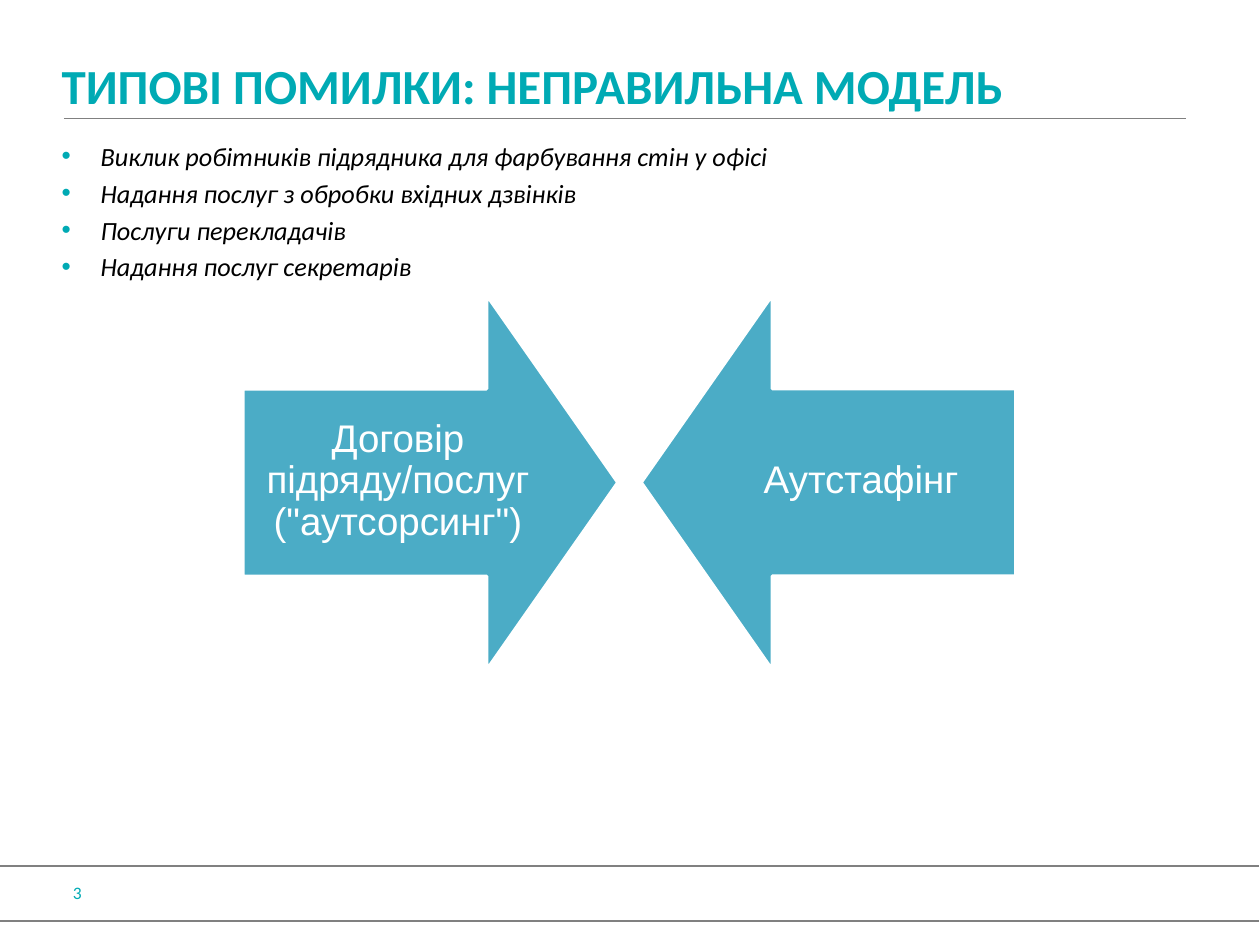
import pptx
import pptx.dml.color
import pptx.enum.shapes
import pptx.enum.text
import pptx.oxml
import pptx.oxml.ns
import pptx.util
from lxml import etree

EMU_PER_PX = 914400 // 126
TEAL = pptx.dml.color.RGBColor(0x00, 0xAA, 0xB4)
BLUE = pptx.dml.color.RGBColor(0x4B, 0xAC, 0xC6)
GREY = pptx.dml.color.RGBColor(0x80, 0x80, 0x80)
BLACK = pptx.dml.color.RGBColor(0, 0, 0)
WHITE = pptx.dml.color.RGBColor(255, 255, 255)
ALIGN = pptx.enum.text.PP_ALIGN
MIDDLE = pptx.enum.text.MSO_ANCHOR.MIDDLE
TOP = pptx.enum.text.MSO_ANCHOR.TOP

TITLE_FORMAT = {"name": "Calibri", "size": pptx.util.Pt(28), "bold": True, "color": TEAL}
LIST_FORMAT = {"name": "Calibri", "size": pptx.util.Pt(15), "italic": True, "color": BLACK}
NUMBER_FORMAT = {"name": "Calibri", "size": pptx.util.Pt(10), "color": TEAL}
ARROW_FORMAT = {"name": "Arial", "size": pptx.util.Pt(22), "color": WHITE}


def px(value):
    return pptx.util.Emu(value * EMU_PER_PX)


class SlideBuilder:
    def __init__(self, slide):
        self.slide = slide

    def place(self, shape, box):
        for name, value in zip(("left", "top", "width", "height"), box):
            setattr(shape, name, px(value))

    def style(self, paragraph, text_format, align):
        paragraph.alignment = align
        for name, value in text_format.items():
            if name == "color":
                paragraph.font.color.rgb = value
            else:
                setattr(paragraph.font, name, value)

    def prepare_frame(self, shape, anchor):
        frame = shape.text_frame
        frame.word_wrap = True
        frame.auto_size = pptx.enum.text.MSO_AUTO_SIZE.NONE
        frame.vertical_anchor = anchor
        return frame

    def title(self, text, box):
        shape = self.slide.shapes.title
        self.place(shape, box)
        frame = self.prepare_frame(shape, MIDDLE)
        frame.text = text
        self.style(frame.paragraphs[0], TITLE_FORMAT, ALIGN.LEFT)

    def bullets(self, items, box):
        shape = self.slide.placeholders[1]
        self.place(shape, box)
        frame = self.prepare_frame(shape, TOP)
        frame.text = "\n".join(items)
        for index, paragraph in enumerate(frame.paragraphs):
            properties = paragraph._p.get_or_add_pPr()
            properties.set("marL", str(px(39)))
            properties.set("indent", str(-px(39)))
            color = etree.SubElement(properties, pptx.oxml.ns.qn("a:buClr"))
            etree.SubElement(color, pptx.oxml.ns.qn("a:srgbClr"), val=str(TEAL))
            etree.SubElement(properties, pptx.oxml.ns.qn("a:buFont"), typeface="Arial")
            etree.SubElement(properties, pptx.oxml.ns.qn("a:buChar"), char="•")
            paragraph.space_before = pptx.util.Pt(3 if index else 0)
            self.style(paragraph, LIST_FORMAT, ALIGN.LEFT)

    def text(self, text, box, text_format, align, margin=None, line_spacing=None):
        shape = self.slide.shapes.add_textbox(*map(px, box))
        frame = self.prepare_frame(shape, MIDDLE)
        if margin is not None:
            for side in ("left", "top", "right", "bottom"):
                setattr(frame, f"margin_{side}", px(margin))
        frame.text = text
        paragraph = frame.paragraphs[0]
        paragraph.line_spacing = line_spacing
        self.style(paragraph, text_format, align)

    def rule(self, left, right, y, weight):
        line = self.slide.shapes.add_connector(
            pptx.enum.shapes.MSO_CONNECTOR.STRAIGHT, px(left), px(y), px(right), px(y))
        line.line.color.rgb = GREY
        line.line.width = pptx.util.Pt(weight)
        etree.SubElement(line._element.spPr, pptx.oxml.ns.qn("a:effectLst"))

    def arrow(self, left, top, size, rotation):
        shape = self.slide.shapes.add_shape(
            pptx.enum.shapes.MSO_SHAPE.DOWN_ARROW, *map(px, (left, top, size, size)))
        shape.rotation = rotation
        shape.adjustments[0] = 0.5
        shape.adjustments[1] = 0.35
        shape.shadow.inherit = False
        shape.fill.solid()
        shape.fill.fore_color.rgb = BLUE
        shape.line.color.rgb = WHITE
        shape.line.width = pptx.util.Pt(2)


def main():
    presentation = pptx.Presentation()
    presentation.slide_width = pptx.util.Inches(10)
    presentation.slide_height = pptx.util.Inches(7.5)
    slide = presentation.slides.add_slide(presentation.slide_layouts[1])
    builder = SlideBuilder(slide)

    for left, right, y, weight in ((0, 1259, 866, 1.5), (0, 1259, 921, 1.5), (64, 1186, 118, 0.25)):
        builder.rule(left, right, y, weight)
    builder.title("ТИПОВІ ПОМИЛКИ: НЕПРАВИЛЬНА МОДЕЛЬ", (49, 49, 1176, 72))
    builder.bullets((
        "Виклик робітників підрядника для фарбування стін у офісі",
        "Надання послуг з обробки вхідних дзвінків",
        "Послуги перекладачів",
        "Надання послуг секретарів",
    ), (49, 134, 1160, 714))
    builder.text("3", (0, 868, 94, 50), NUMBER_FORMAT, ALIGN.RIGHT)

    arrow_top, arrow_size, label_width = 295, 375, 310
    for label, left, label_shift, rotation in (
        ("Договір підряду/послуг (\"аутсорсинг\")", 243, 0, 270),
        ("Аутстафінг", 641, arrow_size - label_width, 90),
    ):
        builder.arrow(left, arrow_top, arrow_size, rotation)
        label_box = (left + label_shift, arrow_top + arrow_size // 4, label_width, arrow_size // 2)
        builder.text(label, label_box, ARROW_FORMAT, ALIGN.CENTER, margin=21, line_spacing=0.9)

    presentation.save("out.pptx")


if __name__ == "__main__":
    main()
